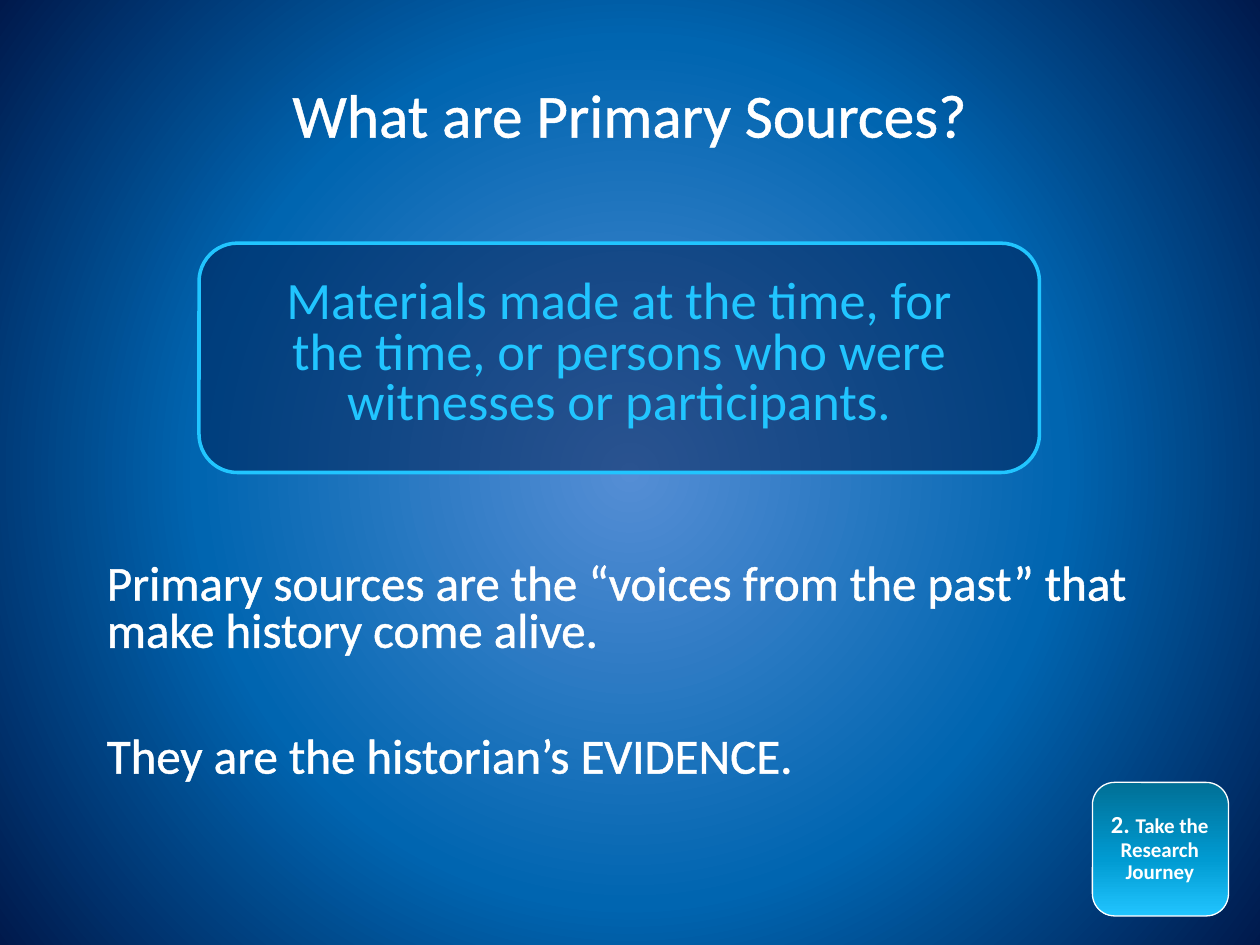
from pptx import Presentation
from pptx.dml.color import RGBColor
from pptx.enum.shapes import MSO_SHAPE
from pptx.enum.text import MSO_ANCHOR, PP_ALIGN
from pptx.oxml import parse_xml
from pptx.oxml.ns import nsdecls, qn
from pptx.util import Inches, Pt

WHITE = RGBColor(0xFF, 0xFF, 0xFF)
NAVY = RGBColor(0x00, 0x19, 0x4C)
BLUE = RGBColor(0x00, 0x65, 0xB0)
PALE_BLUE = RGBColor(0x55, 0x8E, 0xD5)
CYAN = RGBColor(0x21, 0xC5, 0xFF)
TEAL = RGBColor(0x00, 0x6F, 0x96)
SKY = RGBColor(0x00, 0x9B, 0xD2)

RADIAL = (
    '<a:path path="circle">'
    '<a:fillToRect l="50000" t="50000" r="50000" b="50000"/></a:path>'
)
DOWNWARD = '<a:lin ang="5400000" scaled="0"/>'


def set_gradient(fill, element, stops, direction):
    fill.gradient()
    stop_xml = "".join(
        f'<a:gs pos="{position * 1000}"><a:srgbClr val="{color}"/></a:gs>'
        for position, color in stops
    )
    gradient = parse_xml(
        f'<a:gradFill {nsdecls("a")} rotWithShape="1">'
        f"<a:gsLst>{stop_xml}</a:gsLst>{direction}</a:gradFill>"
    )
    default = element.find(".//" + qn("a:gradFill"))
    default.getparent().replace(default, gradient)


def add_rounded_box(slide, left, top, width, height, line_color, line_width):
    shape = slide.shapes.add_shape(
        MSO_SHAPE.ROUNDED_RECTANGLE,
        Inches(left), Inches(top), Inches(width), Inches(height),
    )
    shape.shadow.inherit = False
    shape.line.color.rgb = line_color
    shape.line.width = Pt(line_width)
    return shape


def set_transparent_fill(shape, color, opacity):
    shape.fill.solid()
    shape.fill.fore_color.rgb = color
    color_element = shape.fill._xPr.find(".//" + qn("a:srgbClr"))
    color_element.append(
        parse_xml(f'<a:alpha {nsdecls("a")} val="{opacity * 1000}"/>')
    )


def add_text_box(slide, left, top, width, height):
    box = slide.shapes.add_textbox(
        Inches(left), Inches(top), Inches(width), Inches(height)
    )
    box.text_frame.word_wrap = True
    return box.text_frame


def format_paragraph(paragraph, alignment, line_spacing=0.8, space_after=0):
    paragraph.alignment = alignment
    paragraph.line_spacing = line_spacing
    paragraph.space_after = Pt(space_after)


def add_run(paragraph, text, size, color=WHITE, bold=False, outline=None):
    run = paragraph.add_run()
    run.text = text
    run.font.name = "Calibri"
    run.font.size = Pt(size)
    run.font.bold = bold
    run.font.color.rgb = color
    if outline:
        run.font._element.insert(0, parse_xml(
            f'<a:ln {nsdecls("a")} w="{Pt(outline)}"><a:solidFill>'
            f'<a:srgbClr val="{color}"/></a:solidFill></a:ln>'
        ))


def add_title(slide):
    paragraph = add_text_box(slide, 0.25, 0.67, 9.5, 0.58).paragraphs[0]
    format_paragraph(paragraph, PP_ALIGN.CENTER)
    add_run(paragraph, "What are Primary Sources?", 35, outline=1)


def add_definition(slide):
    panel = add_rounded_box(slide, 1.58, 1.93, 6.67, 1.82, CYAN, 2)
    set_transparent_fill(panel, NAVY, 50)
    paragraph = add_text_box(slide, 2.16, 2.17, 5.51, 1.32).paragraphs[0]
    format_paragraph(paragraph, PP_ALIGN.CENTER, space_after=18)
    add_run(
        paragraph,
        "Materials made at the time, for the time, or persons who were "
        "witnesses or participants.",
        30, CYAN,
    )


def add_statements(slide):
    frame = add_text_box(slide, 0.75, 4.42, 8.67, 1.94)
    first, second = frame.paragraphs[0], frame.add_paragraph()
    statements = (
        (first, "Primary sources are the “voices from the past” that make "
                "history come alive.", 45),
        (second, "They are the historian’s EVIDENCE.", 18),
    )
    for paragraph, text, space_after in statements:
        format_paragraph(paragraph, PP_ALIGN.LEFT, space_after=space_after)
        add_run(paragraph, text, 28, outline=1.45)


def add_journey_button(slide):
    button = add_rounded_box(slide, 8.67, 6.21, 1.08, 1.06, WHITE, 0.75)
    set_gradient(
        button.fill, button._element,
        ((0, TEAL), (58, SKY), (100, CYAN)), DOWNWARD,
    )
    frame = add_text_box(slide, 8.67, 6.25, 1.07, 0.97)
    frame.vertical_anchor = MSO_ANCHOR.MIDDLE
    frame.margin_left = frame.margin_right = Inches(0.08)
    frame.margin_top = frame.margin_bottom = Inches(0.08)
    paragraph = frame.paragraphs[0]
    format_paragraph(paragraph, PP_ALIGN.CENTER, line_spacing=0.9)
    add_run(paragraph, "2. ", 14, bold=True)
    add_run(paragraph, "Take the Research Journey", 12, bold=True)


def main():
    presentation = Presentation()
    presentation.slide_width = Inches(10)
    presentation.slide_height = Inches(7.5)
    slide = presentation.slides.add_slide(presentation.slide_layouts[6])
    set_gradient(
        slide.background.fill, slide._element,
        ((0, PALE_BLUE), (55, BLUE), (100, NAVY)), RADIAL,
    )
    add_title(slide)
    add_definition(slide)
    add_statements(slide)
    add_journey_button(slide)
    presentation.save("out.pptx")


if __name__ == "__main__":
    main()
